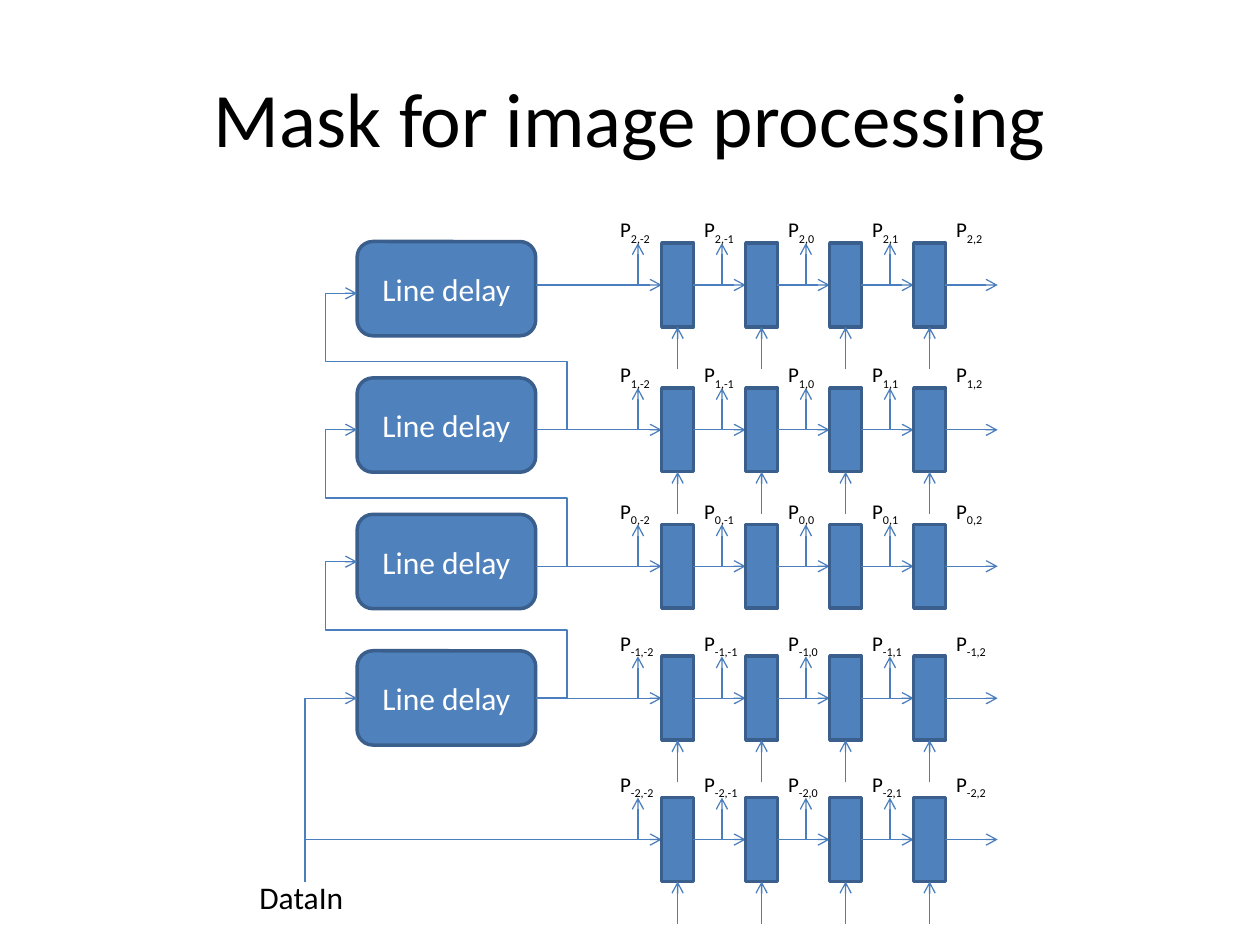
from lxml import etree
from pptx import Presentation
from pptx.dml.color import RGBColor
from pptx.enum.shapes import MSO_CONNECTOR, MSO_SHAPE
from pptx.enum.text import MSO_ANCHOR, MSO_AUTO_SIZE, PP_ALIGN
from pptx.oxml.ns import qn
from pptx.util import Cm, Pt

STRAIGHT, ELBOW = MSO_CONNECTOR.STRAIGHT, MSO_CONNECTOR.ELBOW
RECT, ROUNDED = MSO_SHAPE.RECTANGLE, MSO_SHAPE.ROUNDED_RECTANGLE
CENTER, MIDDLE = PP_ALIGN.CENTER, MSO_ANCHOR.MIDDLE

THEME = {
    "font": "Calibri",
    "text": RGBColor(0x00, 0x00, 0x00),
    "box_text": RGBColor(0xFF, 0xFF, 0xFF),
    "fill": RGBColor(0x4F, 0x81, 0xBD),
    "border": RGBColor(0x3A, 0x5F, 0x8C),
    "arrow": RGBColor(0x4B, 0x7E, 0xBC),
    "title_size": Pt(44),
    "body_size": Pt(18),
    "label_size": Pt(12),
}

# Lengths in centimetres
REG_X, REG_W, REG_H, PITCH = 13.34, 0.64, 1.69, 5.08 / 3
DELAY_X, DELAY_Y, DELAY_W, DELAY_H, DELAY_PITCH = 7.2, 4.87, 3.6, 1.9, 2.75
STUB = 0.85
INPUT_X, INPUT_Y = 6.15, 17.78
ROW_TOPS = {2: 4.9, 1: 7.82, 0: 10.57, -1: 13.23, -2: 16.08}

prs = Presentation()
prs.slide_width, prs.slide_height = Cm(25.4), Cm(19.05)
s = prs.slides.add_slide(prs.slide_layouts[5])


def add_box(kind, x, y, w, h):
    sp = s.shapes.add_shape(kind, Cm(x), Cm(y), Cm(w), Cm(h))
    sp.shadow.inherit = False
    sp.fill.solid()
    sp.fill.fore_color.rgb = THEME["fill"]
    sp.line.color.rgb = THEME["border"]
    sp.line.width = Pt(2)
    return sp


def add_arrow(x1, y1, x2, y2, kind=STRAIGHT):
    cxn = s.shapes.add_connector(kind, Cm(x1), Cm(y1), Cm(x2), Cm(y2))
    cxn.line.color.rgb = THEME["arrow"]
    cxn.line.width = Pt(0.75)
    etree.SubElement(cxn.line._get_or_add_ln(), qn("a:tailEnd"), type="arrow")
    etree.SubElement(cxn._element.spPr, qn("a:effectLst"))
    return cxn


title = s.shapes.title
title.left, title.top, title.width, title.height = Cm(1.27), Cm(0.76), Cm(22.86), Cm(3.18)
tf = title.text_frame
tf.text = "Mask for image processing"
tf.vertical_anchor = MIDDLE
p = tf.paragraphs[0]
p.alignment = CENTER
p.font.name, p.font.size = THEME["font"], THEME["title_size"]
p.font.color.rgb = THEME["text"]

# Line delays
for i in range(4):
    sp = add_box(ROUNDED, DELAY_X, DELAY_Y + i * DELAY_PITCH, DELAY_W, DELAY_H)
    tf = sp.text_frame
    tf.text = "Line delay"
    tf.vertical_anchor = MIDDLE
    p = tf.paragraphs[0]
    p.alignment = CENTER
    p.font.name, p.font.size = THEME["font"], THEME["body_size"]
    p.font.color.rgb = THEME["box_text"]

# Register rows; text boxes are gathered as x, y, w, h, text, subscript, size
texts = [(4.98, 17.58, 2.21, 1.02, "DataIn", "", THEME["body_size"])]
for row, top in ROW_TOPS.items():
    axis = top + REG_H / 2
    start = INPUT_X if row == -2 else DELAY_X + DELAY_W
    add_arrow(start, axis, REG_X, axis)
    for col in range(4):
        x = REG_X + col * PITCH
        add_box(RECT, x, top, REG_W, REG_H)
        add_arrow(x + REG_W, axis, x + PITCH, axis)
        add_arrow(x - 0.48, axis, x - 0.48, top)
        if row != 0:
            bottom = top + REG_H
            add_arrow(x + REG_W / 2, bottom + STUB, x + REG_W / 2, bottom)
    for col in range(5):
        sub = f"{row},{col - 2}"
        texts.append((12.25 + col * PITCH, top - 0.65, 0.82 + 0.09 * len(sub), 0.77,
                      "P", sub, THEME["label_size"]))

# Each delay's output loops back to the delay above
for row in (-1, 0, 1):
    axis = ROW_TOPS[row] + REG_H / 2
    loop = add_arrow(DELAY_X + DELAY_W, axis, DELAY_X, axis - DELAY_PITCH, ELBOW)
    geom = loop._element.spPr.find(qn("a:prstGeom"))
    geom.set("prst", "bentConnector5")
    guides = geom.get_or_add_avLst()
    for n, value in enumerate((-17600, 50000, 117600), start=1):
        etree.SubElement(guides, qn("a:gd"), name=f"adj{n}", fmla=f"val {value}")

# Input feed: a quarter-turned elbow, placed by its centre
feed_y = ROW_TOPS[-1] + REG_H / 2
mid_x, mid_y = (INPUT_X + DELAY_X) / 2, (INPUT_Y + feed_y) / 2
half_w, half_h = (INPUT_Y - feed_y) / 2, (DELAY_X - INPUT_X) / 2
feed = add_arrow(mid_x + half_w, mid_y + half_h, mid_x - half_w, mid_y - half_h, ELBOW)
feed._element.spPr.find(qn("a:prstGeom")).set("prst", "bentConnector2")
feed._element.spPr.find(qn("a:xfrm")).set("rot", "5400000")

for x, y, w, h, text, sub, size in texts:
    tf = s.shapes.add_textbox(Cm(x), Cm(y), Cm(w), Cm(h)).text_frame
    tf.word_wrap = False
    tf.auto_size = MSO_AUTO_SIZE.SHAPE_TO_FIT_TEXT
    p = tf.paragraphs[0]
    p.font.name, p.font.size = THEME["font"], size
    p.font.color.rgb = THEME["text"]
    p.add_run().text = text
    if sub:
        r = p.add_run()
        r.text = sub
        r.font._element.set("baseline", "-25000")

prs.save("out.pptx")
